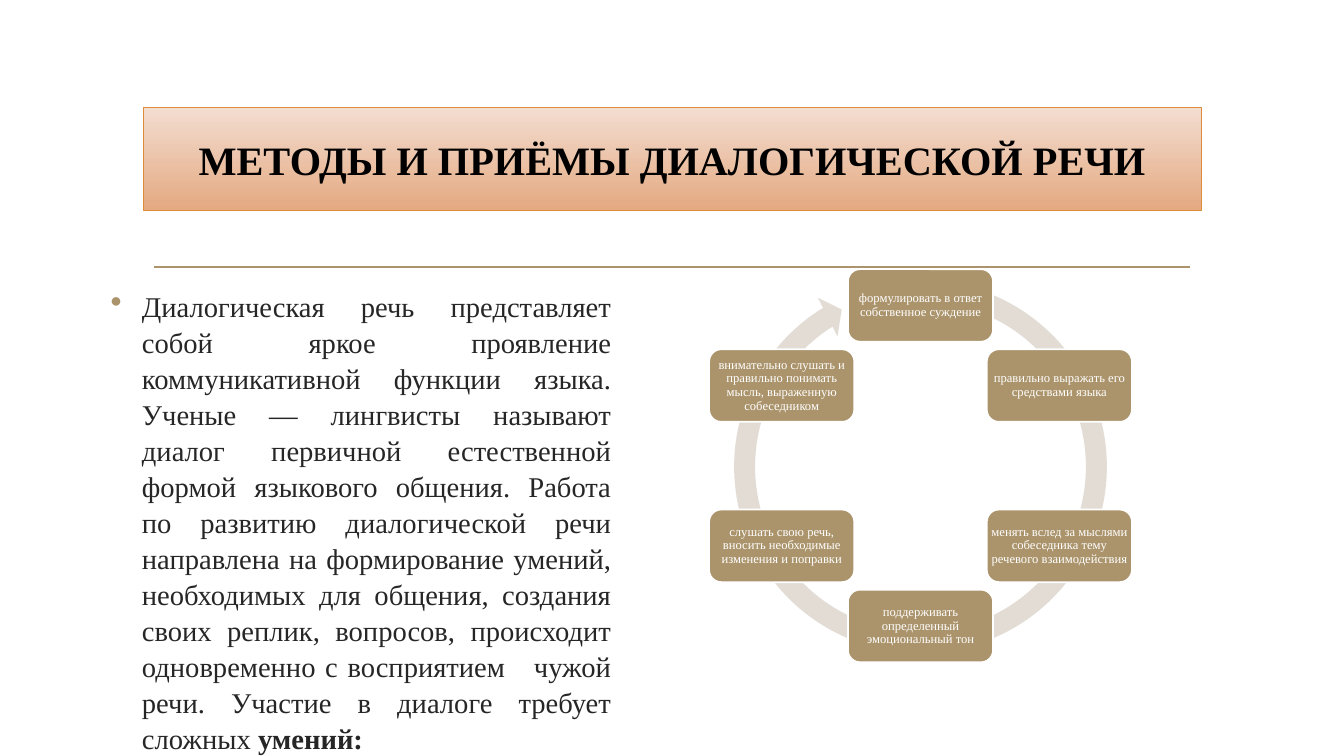
import math
from dataclasses import dataclass
from typing import Any

import lxml.etree
import pptx
import pptx.dml.color
import pptx.enum.shapes
import pptx.enum.text
import pptx.oxml.ns
import pptx.util

WIDE, HIGH = 13.33, 7.5
FONT = "Times New Roman"
HUES = {
    "ink": "000000", "body": "262626", "white": "FFFFFF", "tan": "AB946B",
    "ring": "E2DCD4", "pale": "F3DDD0", "peach": "E4A981", "edge": "DD8C3C",
}
FORMS = pptx.enum.shapes.MSO_SHAPE
ALIGN = pptx.enum.text.PP_ALIGN
MIDDLE = pptx.enum.text.MSO_ANCHOR.MIDDLE


@dataclass
class Box:
    """Left, top, width and height in percent of the slide's size."""
    left: float
    top: float
    width: float
    height: float

    def frame(self) -> tuple[int, ...]:
        return (across(self.left), down(self.top), across(self.width), down(self.height))


@dataclass
class Style:
    size: float
    hue: str
    bold: bool = False


TITLE = Box(10.65, 14.27, 78.75, 13.6)
BODY = Box(7.5, 37.33, 38.7, 48.27)
RULE = (11.48, 88.58, 35.33)  # from, to, height
HUB = (68.49, 61.6)
REACH = 21.2  # radius of the cycle, percent of the height
RING = 52.27  # side of the arrow's square, percent of the height
CARD = (10.8, 9.6)
SWEEP = (5.21, 238.17, 284.85)  # head, end and start angles in degrees

STEPS = [
    "формулировать в ответ собственное суждение",
    "правильно выражать его средствами языка",
    "менять вслед за мыслями собеседника тему речевого взаимодействия",
    "поддерживать определенный эмоциональный тон",
    "слушать свою речь, вносить необходимые изменения и поправки",
    "внимательно слушать и правильно понимать мысль, выраженную собеседником",
]
SPEECH = (
    "Диалогическая речь представляет собой яркое проявление коммуникативной "
    "функции языка. Ученые — лингвисты называют диалог первичной естественной "
    "формой языкового общения. Работа по развитию диалогической речи направлена "
    "на формирование умений, необходимых для общения, создания своих реплик, "
    "вопросов, происходит одновременно с восприятием   чужой речи. Участие в "
    "диалоге требует сложных "
)


def across(share: float) -> int:
    return pptx.util.Inches(WIDE * share / 100)


def down(share: float) -> int:
    return pptx.util.Inches(HIGH * share / 100)


def tint(name: str) -> pptx.dml.color.RGBColor:
    return pptx.dml.color.RGBColor.from_string(HUES[name])


def apply(item: Any, values: dict[str, Any]) -> None:
    for name, value in values.items():
        setattr(item, name, value)


def write(para: Any, text: str, style: Style) -> None:
    run = para.add_run()
    run.text = text
    apply(run.font, {"name": FONT, "size": pptx.util.Pt(style.size), "bold": style.bold})
    run.font.color.rgb = tint(style.hue)


def stroke(line: Any, hue: str, width: float) -> None:
    line.color.rgb = tint(hue)
    line.width = pptx.util.Pt(width)


def shape(slide: Any, form: Any, box: Box, fill: str) -> Any:
    item = slide.shapes.add_shape(form, *box.frame())
    item.shadow.inherit = False
    item.fill.solid()
    item.fill.fore_color.rgb = tint(fill)
    return item


def label(item: Any, text: str, style: Style, space: float, inset: float) -> None:
    edge = pptx.util.Inches(inset)
    apply(item.text_frame, {
        "word_wrap": True, "vertical_anchor": MIDDLE,
        "margin_left": edge, "margin_right": edge,
        "margin_top": edge, "margin_bottom": edge,
    })
    para = item.text_frame.paragraphs[0]
    apply(para, {"alignment": ALIGN.CENTER, "line_spacing": space})
    write(para, text, style)


def bullet(para: Any) -> None:
    props = para._p.get_or_add_pPr()
    apply_xml = {"marL": 0.31, "indent": -0.31}
    for name, value in apply_xml.items():
        props.set(name, str(pptx.util.Inches(value)))
    qn = pptx.oxml.ns.qn
    hue = lxml.etree.SubElement(props, qn("a:buClr"))
    lxml.etree.SubElement(hue, qn("a:srgbClr"), val=HUES["tan"])
    lxml.etree.SubElement(props, qn("a:buSzPct"), val="115000")
    lxml.etree.SubElement(props, qn("a:buChar"), char="•")


def draw_rule(slide: Any) -> None:
    start, end, level = RULE
    line = slide.shapes.add_connector(
        pptx.enum.shapes.MSO_CONNECTOR.STRAIGHT,
        across(start), down(level), across(end), down(level))
    stroke(line.line, "tan", 1.25)
    lxml.etree.SubElement(line._element.spPr, pptx.oxml.ns.qn("a:effectLst"))


def draw_title(slide: Any) -> None:
    item = shape(slide, FORMS.RECTANGLE, TITLE, "pale")
    item.fill.gradient()
    item.fill.gradient_angle = 270
    for stop, (place, hue) in zip(item.fill.gradient_stops, [(0, "pale"), (1, "peach")]):
        stop.position = place
        stop.color.rgb = tint(hue)
    stroke(item.line, "edge", 0.75)
    label(item, "МЕТОДЫ И ПРИЁМЫ ДИАЛОГИЧЕСКОЙ РЕЧИ", Style(28.8, "ink", True), 1.0, 0.05)


def draw_body(slide: Any) -> None:
    frame = slide.shapes.add_textbox(*BODY.frame()).text_frame
    frame.word_wrap = True
    para = frame.paragraphs[0]
    bullet(para)
    apply(para, {"alignment": ALIGN.JUSTIFY, "line_spacing": 1.05})
    write(para, SPEECH, Style(20.4, "body"))
    write(para, "умений:", Style(20.4, "body", True))


def draw_cycle(slide: Any) -> None:
    ratio = HIGH / WIDE
    mid, level = HUB
    side = RING * ratio
    ring = shape(slide, FORMS.CIRCULAR_ARROW,
                 Box(mid - side / 2, level + 0.13 - RING / 2, side, RING), "ring")
    ring.line.fill.background()
    turns = [angle * 0.6 for angle in SWEEP]
    for spot, value in enumerate([5.3 / 100, *turns, 5.5 / 100]):
        ring.adjustments[spot] = value
    width, height = CARD
    for spot, text in enumerate(STEPS):
        angle = math.tau * spot / len(STEPS)
        left = mid + REACH * ratio * math.sin(angle) - width / 2
        top = level - REACH * math.cos(angle) - height / 2
        card = shape(slide, FORMS.ROUNDED_RECTANGLE, Box(left, top, width, height), "tan")
        stroke(card.line, "white", 1.25)
        label(card, text, Style(9, "white"), 0.9, 0)


def main() -> None:
    deck = pptx.Presentation()
    apply(deck, {"slide_width": across(100), "slide_height": down(100)})
    slide = deck.slides.add_slide(deck.slide_layouts[6])
    for draw in (draw_rule, draw_title, draw_body, draw_cycle):
        draw(slide)
    deck.save("out.pptx")


if __name__ == "__main__":
    main()
